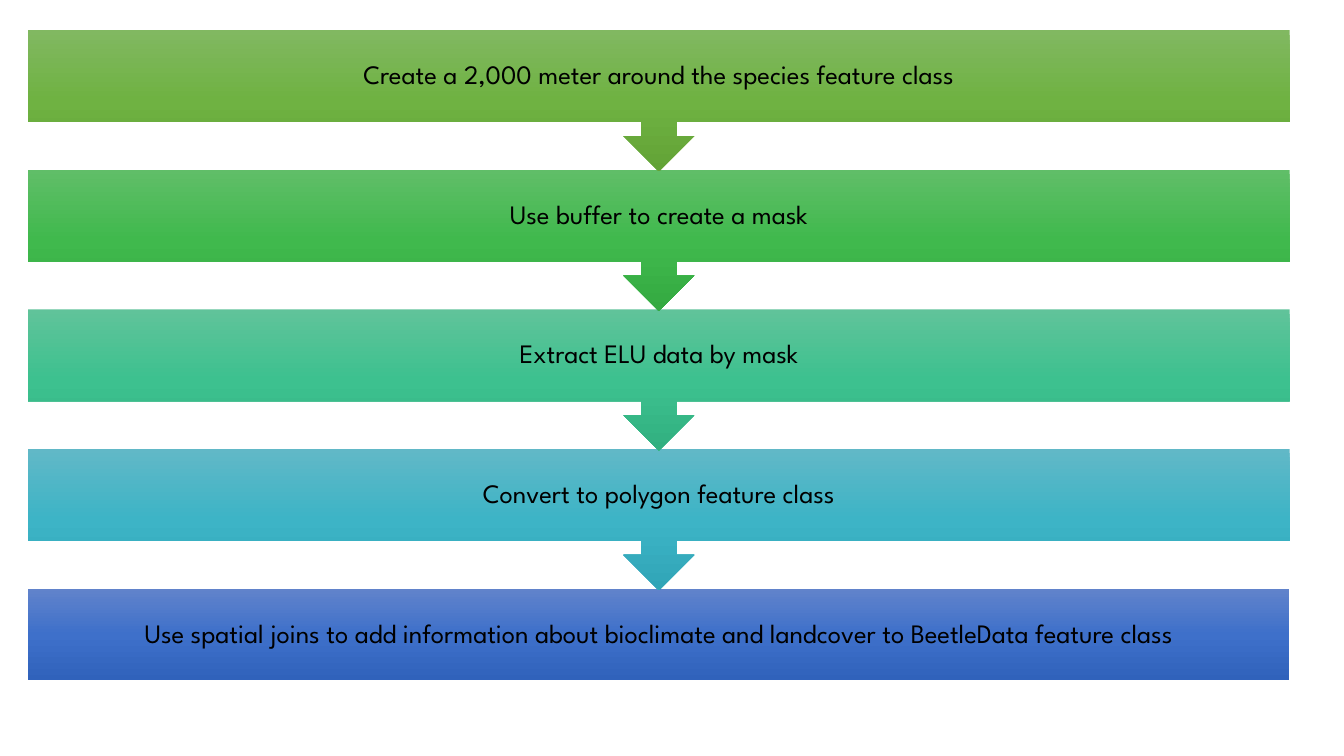
from copy import deepcopy

from pptx import Presentation
from pptx import util as u
from pptx.dml.color import RGBColor
from pptx.enum import shapes, text
from pptx.oxml.ns import qn

FONT = "League Spartan"
COLORS = {
    "text": "000000",
    "olive": ("81B861", "6FB242", "62A336"),
    "green": ("60BE68", "40B94D", "34AA41"),
    "mint": ("60C39A", "3DC18F", "31B080"),
    "teal": ("61B8C7", "3DB4C6", "30A5B7"),
    "blue": ("6183CB", "3E70CA", "3062BB"),
}
STEPS = [
    ("Create a 2,000 meter around the species feature class", "olive"),
    ("Use buffer to create a mask", "green"),
    ("Extract ELU data by mask", "mint"),
    ("Convert to polygon feature class", "teal"),
    ("Use spatial joins to add information about bioclimate and landcover "
     "to BeetleData feature class", "blue"),
]
BAR_HEIGHT = 0.91
CALLOUT_HEIGHT = 1.4


def fill_gradient(shape, colors):
    """Shade the shape from top to bottom through three evenly spaced colours."""
    shape.fill.gradient()
    shape.fill.gradient_angle = 270
    stop_list = shape._element.spPr.find(".//" + qn("a:gsLst"))
    stop_list.append(deepcopy(stop_list[0]))
    for index, (stop, color) in enumerate(zip(shape.fill.gradient_stops, colors)):
        stop.position = index / 2
        stop.color.rgb = RGBColor.from_string(color)


def write_label(shape, label):
    frame = shape.text_frame
    frame.text = label
    frame.word_wrap = True
    frame.vertical_anchor = text.MSO_ANCHOR.MIDDLE
    frame.margin_left = frame.margin_right = u.Inches(0.15)
    frame.margin_top = frame.margin_bottom = u.Inches(0.15)
    paragraph = frame.paragraphs[0]
    paragraph.alignment = text.PP_ALIGN.CENTER
    paragraph.line_spacing = 0.9
    font = paragraph.runs[0].font
    font.name = FONT
    font.size = u.Pt(19)
    font.color.rgb = RGBColor.from_string(COLORS["text"])


def add_process(slide, left, top, width, height):
    """Stack the steps in the box, each but the last pointing to the next."""
    pitch = (height - BAR_HEIGHT) / (len(STEPS) - 1)
    last = len(STEPS) - 1
    # The last step goes in first, so that every arrow tip lies over the next bar.
    for index in range(last, -1, -1):
        label, color = STEPS[index]
        if index == last:
            kind, step_height = shapes.MSO_SHAPE.RECTANGLE, BAR_HEIGHT
        else:
            kind, step_height = shapes.MSO_SHAPE.DOWN_ARROW_CALLOUT, CALLOUT_HEIGHT
        step = slide.shapes.add_shape(
            kind, u.Inches(left), u.Inches(top + index * pitch),
            u.Inches(width), u.Inches(step_height))
        step.shadow.inherit = False
        step.line.fill.background()
        fill_gradient(step, COLORS[color])
        write_label(step, label)


def main():
    presentation = Presentation()
    presentation.slide_width = u.Inches(13.33)
    presentation.slide_height = u.Inches(7.5)
    slide = presentation.slides.add_slide(presentation.slide_layouts[6])
    add_process(slide, left=0.28, top=0.3, width=12.51, height=6.45)
    presentation.save("out.pptx")


if __name__ == "__main__":
    main()
